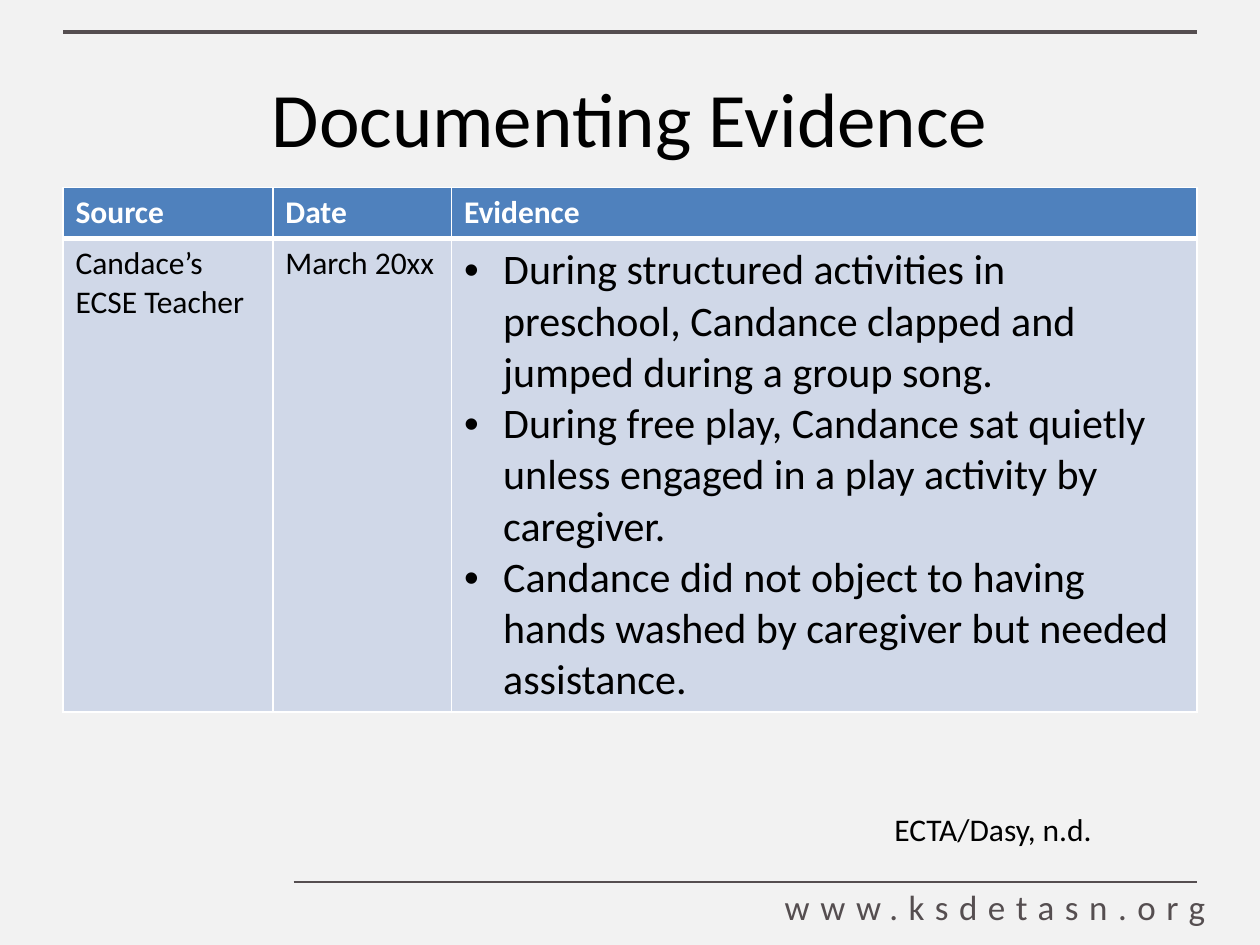
"""Build the Documenting Evidence slide with its source, date and evidence table."""
from lxml.etree import SubElement
from pptx import Presentation
from pptx.dml.color import RGBColor
from pptx.enum.shapes import MSO_CONNECTOR
from pptx.enum.text import MSO_ANCHOR, MSO_AUTO_SIZE, PP_ALIGN
from pptx.oxml import parse_xml
from pptx.oxml.ns import nsdecls, qn
from pptx.util import Cm, Pt


def color(value):
    """Turn a hex string into a colour."""
    return RGBColor.from_string(value)


def format_font(font, size, value, bold=False):
    """Apply the slide's typeface with a size, colour and weight."""
    settings = {"name": "Calibri", "size": Pt(size), "bold": bold}
    for name, setting in settings.items():
        setattr(font, name, setting)
    font.color.rgb = color(value)


presentation = Presentation()
presentation.slide_width, presentation.slide_height = Cm(25.4), Cm(19.05)
slide = presentation.slides.add_slide(presentation.slide_layouts[5])
slide.background.fill.solid()
slide.background.fill.fore_color.rgb = color("F2F2F2")

for left, top, width in [(1.27, 0.64, 2.25), (5.92, 17.78, 0.75)]:
    rule = slide.shapes.add_connector(
        MSO_CONNECTOR.STRAIGHT, Cm(left), Cm(top), Cm(24.13), Cm(top))
    rule.line.color.rgb = color("554E50")
    rule.line.width = Pt(width)
    SubElement(rule.element.spPr, qn("a:effectLst"))

title = slide.shapes.title
title_place = {"left": 1.27, "top": 0.76, "width": 22.86, "height": 3.18}
for name, length in title_place.items():
    setattr(title, name, Cm(length))
title.text_frame.text = "Documenting Evidence"
title.text_frame.vertical_anchor = MSO_ANCHOR.MIDDLE
title.text_frame.paragraphs[0].alignment = PP_ALIGN.CENTER
format_font(title.text_frame.paragraphs[0].font, 44, "000000")

labels = [
    ("www.ksdetasn.org", (15.57, 17.73, 9.27, 1.12), 20, "554E50", False, 600),
    ("ECTA/Dasy, n.d.", (17.78, 16.21, 12.7, 1.02), 18, "000000", True, 0),
]
for text, place, size, value, wrap, spacing in labels:
    label = slide.shapes.add_textbox(*map(Cm, place))
    label.text_frame.word_wrap = wrap
    label.text_frame.auto_size = MSO_AUTO_SIZE.SHAPE_TO_FIT_TEXT
    run = label.text_frame.paragraphs[0].add_run()
    run.text = text
    format_font(run.font, size, value)
    if spacing:
        run.font._element.set("spc", str(spacing))

evidence = [
    "During structured activities in preschool, Candance clapped and jumped during a group song.",
    "During free play, Candance sat quietly unless engaged in a play activity by caregiver.",
    "Candance did not object to having hands washed by caregiver but needed assistance.",
]
rows = [
    [["Source"], ["Date"], ["Evidence"]],
    [["Candace’s ECSE Teacher"], ["March 20xx"], evidence],
]
row_styles = [
    {"fill": "4F81BD", "text": "FFFFFF", "bold": True, "top": 1, "bottom": 3},
    {"fill": "D0D8E8", "text": "000000", "bold": False, "top": 3, "bottom": 1},
]
table = slide.shapes.add_table(
    2, 3, Cm(1.27), Cm(3.78), Cm(22.86), Cm(10.57)).table
for column, width in zip(table.columns, (4.23, 3.6, 15.03)):
    column.width = Cm(width)
for row, height in zip(table.rows, (1.03, 9.54)):
    row.height = Cm(height)

for row, contents, style in zip(table.rows, rows, row_styles):
    for cell, texts in zip(row.cells, contents):
        cell.fill.solid()
        cell.fill.fore_color.rgb = color(style["fill"])
        cell.text = "\n".join(texts)
        bulleted = texts is evidence
        for paragraph in cell.text_frame.paragraphs:
            if bulleted:
                properties = paragraph._p.get_or_add_pPr()
                properties.set("marL", str(Cm(0.79)))
                properties.set("indent", str(Cm(-0.79)))
                SubElement(properties, qn("a:buFont"), typeface="Arial")
                SubElement(properties, qn("a:buChar"), char="•")
            format_font(paragraph.font, 24 if bulleted else 18,
                        style["text"], style["bold"])
        borders = {"lnL": 1, "lnR": 1, "lnT": style["top"], "lnB": style["bottom"]}
        for position, (side, width) in enumerate(borders.items()):
            cell._tc.get_or_add_tcPr().insert(position, parse_xml(
                f'<a:{side} {nsdecls("a")} w="{Pt(width)}"><a:solidFill>'
                f'<a:srgbClr val="FFFFFF"/></a:solidFill></a:{side}>'))

presentation.save("out.pptx")
